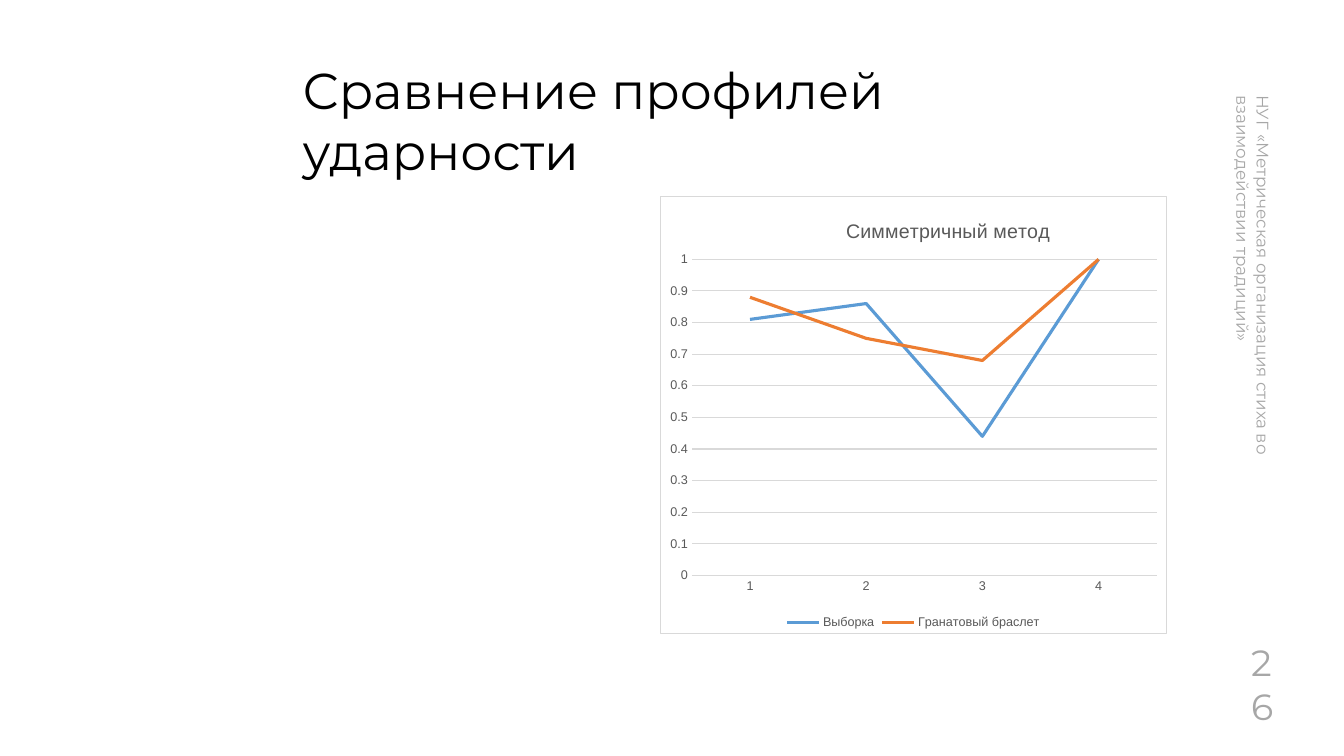
from lxml import etree
from pptx import Presentation
from pptx.chart.data import CategoryChartData
from pptx.dml.color import RGBColor
from pptx.enum.chart import XL_CHART_TYPE, XL_LEGEND_POSITION, XL_TICK_MARK
from pptx.enum.text import MSO_ANCHOR, MSO_AUTO_SIZE
from pptx.oxml import parse_xml
from pptx.oxml.ns import nsdecls, qn
from pptx.util import Cm, Pt

LINE_CHART = XL_CHART_TYPE.LINE
LEGEND_BOTTOM = XL_LEGEND_POSITION.BOTTOM
NO_TICK = XL_TICK_MARK.NONE
TOP = MSO_ANCHOR.TOP
NO_AUTOFIT = MSO_AUTO_SIZE.NONE


def color(hex_string):
    return RGBColor.from_string(hex_string)


class SlideBuilder:
    text_font = "Montserrat"
    chart_font = "Arial"
    black = "000000"
    muted = "A7A7A7"
    chart_text = "595959"
    chart_line = "D9D9D9"

    def __init__(self, slide):
        self.slide = slide

    def style_font(self, font, name, size, hex_string):
        font.name = name
        font.size = Pt(size)
        font.bold = False
        font.color.rgb = color(hex_string)

    def style_line(self, line, hex_string, width):
        line.color.rgb = color(hex_string)
        line.width = Pt(width)

    def add_text(self, text, left, top, width, height, size, hex_string, rotation=0):
        shape = self.slide.shapes.add_textbox(Cm(left), Cm(top), Cm(width), Cm(height))
        shape.rotation = rotation
        frame = shape.text_frame
        frame.word_wrap = True
        frame.auto_size = NO_AUTOFIT
        frame.vertical_anchor = TOP
        frame.margin_left = frame.margin_right = Cm(0.13)
        frame.margin_top = frame.margin_bottom = Cm(0.13)
        frame.text = text
        run = frame.paragraphs[0].runs[0]
        self.style_font(run.font, self.text_font, size, hex_string)

    def set_layout(self, parent, index, **settings):
        """Place a chart part by fractions of the chart area."""
        for old_layout in parent.findall(qn("c:layout")):
            parent.remove(old_layout)
        layout = etree.Element(qn("c:layout"))
        manual = etree.SubElement(layout, qn("c:manualLayout"))
        for name, value in settings.items():
            etree.SubElement(manual, qn("c:" + name)).set("val", str(value))
        parent.insert(index, layout)

    def frame_chart(self, chart):
        """Give the chart area a white fill and a thin border."""
        area = parse_xml(
            f'<c:spPr {nsdecls("c", "a")}>'
            '<a:solidFill><a:srgbClr val="FFFFFF"/></a:solidFill>'
            f'<a:ln w="{Pt(0.75)}"><a:solidFill><a:srgbClr val="{self.chart_line}"/>'
            "</a:solidFill></a:ln></c:spPr>"
        )
        chart.element.find(qn("c:chart")).addnext(area)

    def add_line_chart(self, title, categories, series, left, top, width, height):
        data = CategoryChartData()
        data.categories = categories
        for name, values, _ in series:
            data.add_series(name, values)
        chart = self.slide.shapes.add_chart(
            LINE_CHART, Cm(left), Cm(top), Cm(width), Cm(height), data
        ).chart
        self.style_font(chart.font, self.chart_font, 10, self.black)
        self.frame_chart(chart)

        # Title
        chart.has_title = True
        title_frame = chart.chart_title.text_frame
        title_frame.text = title
        title_font = title_frame.paragraphs[0].runs[0].font
        self.style_font(title_font, self.chart_font, 14, self.chart_text)
        chart.chart_title.include_in_layout = False
        title_element = chart.element.find(".//" + qn("c:title"))
        self.set_layout(title_element, 1, xMode="edge", yMode="edge", x=0.36, y=0.04)

        # Plot and series
        plot_area = chart.element.find(".//" + qn("c:plotArea"))
        self.set_layout(plot_area, 0, layoutTarget="inner", xMode="edge", yMode="edge",
                        x=0.063, y=0.143, w=0.917, h=0.724)
        chart.plots[0].vary_by_categories = False
        for line, (_, _, hex_string) in zip(chart.plots[0].series, series):
            line.smooth = False
            self.style_line(line.format.line, hex_string, 2.25)

        # Axes
        for axis in (chart.category_axis, chart.value_axis):
            axis.major_tick_mark = axis.minor_tick_mark = NO_TICK
            self.style_font(axis.tick_labels.font, self.chart_font, 9, self.chart_text)
        self.style_line(chart.category_axis.format.line, self.chart_line, 0.75)
        value_axis = chart.value_axis
        value_axis.minimum_scale, value_axis.maximum_scale = 0, 1
        value_axis.major_unit = 0.1
        value_axis.format.line.fill.background()
        self.style_line(value_axis.major_gridlines.format.line, self.chart_line, 0.75)

        # Legend
        chart.has_legend = True
        chart.legend.position = LEGEND_BOTTOM
        chart.legend.include_in_layout = False
        self.style_font(chart.legend.font, self.chart_font, 9, self.chart_text)


def main():
    presentation = Presentation()
    presentation.slide_width = Cm(33.87)
    presentation.slide_height = Cm(19.05)
    slide = presentation.slides.add_slide(presentation.slide_layouts[6])
    builder = SlideBuilder(slide)

    # Heading, page number and side label
    builder.add_text("Сравнение профилей ударности", 7.5, 1.37, 17.93, 1.8,
                     36, builder.black)
    builder.add_text("26", 31.4, 16, 1.19, 1.37, 26, builder.muted)
    builder.add_text("НУГ «Метрическая организация стиха во взаимодействии традиций»",
                     25.4, 8.33, 12.88, 0.76, 12, builder.muted, rotation=90)

    # Stress profiles
    builder.add_line_chart(
        "Симметричный метод",
        ["1", "2", "3", "4"],
        [
            ("Выборка", (0.81, 0.86, 0.44, 1), "5B9BD5"),
            ("Гранатовый браслет", (0.88, 0.75, 0.68, 1), "ED7D31"),
        ],
        16.62, 4.95, 12.8, 11.03,
    )

    presentation.save("out.pptx")


if __name__ == "__main__":
    main()
